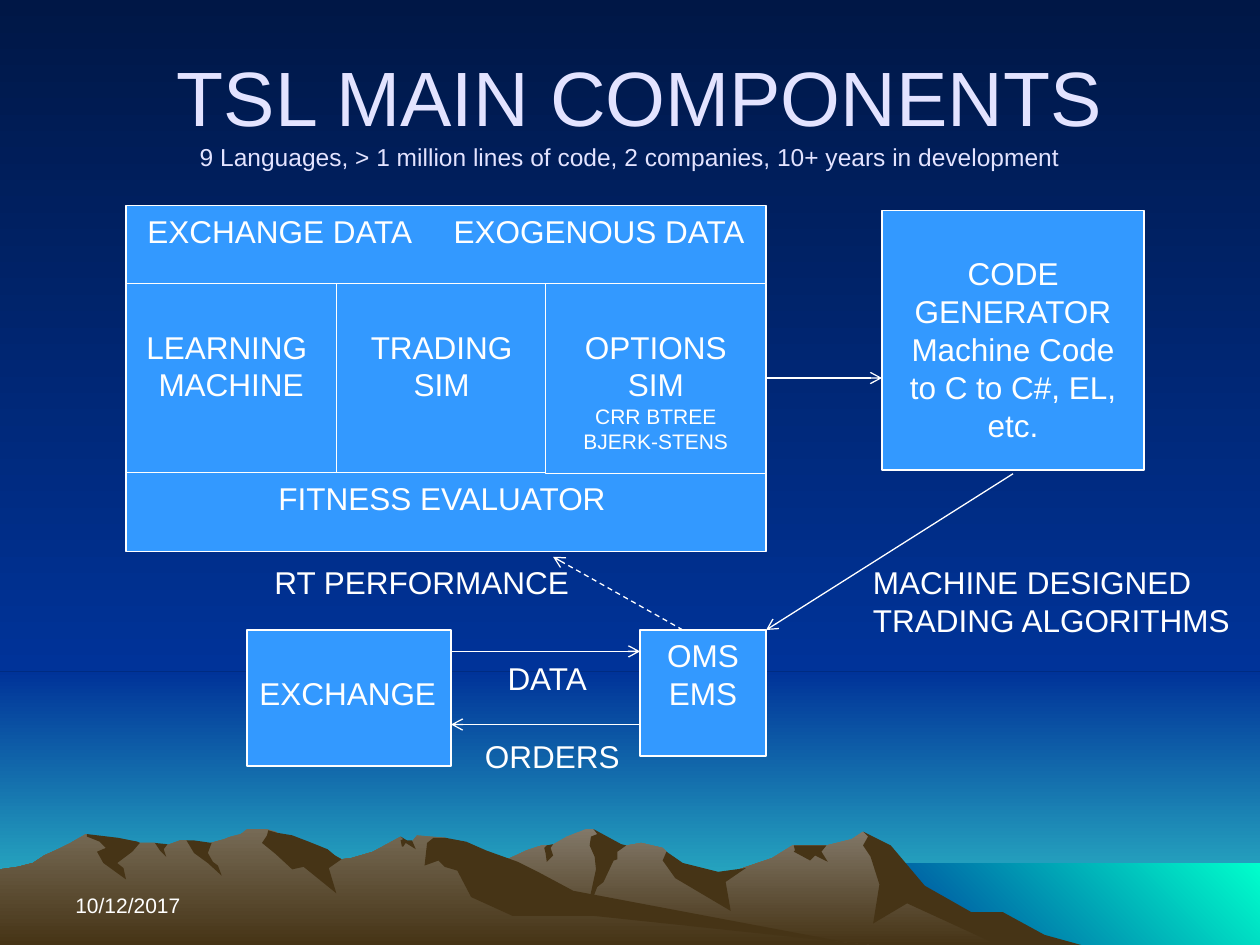
import pptx
import pptx.dml.color
import pptx.enum.dml
import pptx.enum.shapes
import pptx.enum.text
import pptx.oxml
import pptx.oxml.ns
import pptx.util

Inches, Pt = pptx.util.Inches, pptx.util.Pt
RGB = pptx.dml.color.RGBColor
SHAPE = pptx.enum.shapes.MSO_SHAPE
ALIGN = pptx.enum.text.PP_ALIGN
ANCHOR = pptx.enum.text.MSO_ANCHOR

WHITE = RGB(0xFF, 0xFF, 0xFF)
LAVENDER = RGB(0xE3, 0xE3, 0xFF)
BOX_BLUE = RGB(0x33, 0x99, 0xFF)
NIGHT = RGB(0x00, 0x17, 0x46)
ROYAL = RGB(0x00, 0x33, 0x99)
HORIZON = RGB(0x33, 0xCC, 0xCC)
AQUA = RGB(0x00, 0xFF, 0xCC)
EARTH = RGB(0x46, 0x34, 0x16)
FAR_ROCK = RGB(0x82, 0x78, 0x68)
NEAR_ROCK = RGB(0x76, 0x6A, 0x55)
DOWN, UP_RIGHT = 270, 45

# left, top, width, height, first colour, last colour, direction
BACKDROP = [
    (0, 5.33, 10, 2.17, ROYAL, HORIZON, DOWN),
    (0, 0, 10, 5.33, NIGHT, ROYAL, DOWN),
    (6.83, 6.85, 3.17, 0.65, ROYAL, AQUA, UP_RIGHT),
]

FAR_RIDGE = [
    (8.02, 7.4), (7.78, 7.27), (7.64, 7.23), (7.23, 6.98), (7.02, 6.71), (6.85, 6.6),
    (6.76, 6.66), (6.56, 6.71), (6.29, 6.71), (6.13, 6.81), (5.66, 6.97), (5.36, 6.9),
    (5.29, 6.76), (5.26, 6.73), (5.09, 6.69), (4.86, 6.73), (4.74, 6.61), (4.71, 6.58),
    (4.65, 6.58), (4.5, 6.64), (4.38, 6.71), (4.3, 6.71), (4.18, 6.75), (4.05, 6.81),
    (3.94, 6.85), (3.55, 6.98), (3.27, 7.09), (2.77, 7.39), (2.58, 7.5), (8.21, 7.5),
]
NEAR_RIDGE = [
    (6.9, 7.5), (6.67, 7.48), (4.32, 7.12), (3.54, 6.65), (3.31, 6.63), (3.27, 6.68),
    (3.23, 6.68), (3.18, 6.64), (2.96, 6.76), (2.79, 6.81), (2.71, 6.82), (2.6, 6.76),
    (2.36, 6.81), (2.23, 6.63), (2.19, 6.6), (2.12, 6.58), (1.96, 6.58), (1.91, 6.62),
    (1.83, 6.64), (1.78, 6.66), (1.6, 6.71), (1.48, 6.67), (1.43, 6.67), (1.32, 6.71),
    (1.28, 6.71), (1.23, 6.69), (1.11, 6.69), (0.94, 6.71), (0.68, 6.62), (0.56, 6.69),
    (0.46, 6.74), (0.35, 6.79), (0.26, 6.85), (0.14, 6.88), (0, 6.9), (0, 7.5),
]
FAR_SHADOWS = [
    [(7.96, 7.24), (7.71, 7.24), (7.34, 7.03), (7.07, 6.71), (6.85, 6.6), (6.89, 6.64),
     (6.85, 6.71), (6.91, 6.8), (6.98, 7.02), (6.93, 7.33), (7.2, 7.17), (7.92, 7.5),
     (8.58, 7.5), (8.29, 7.42)],
    [(4.71, 6.58), (4.74, 6.62), (4.69, 6.64), (4.68, 6.71), (4.72, 6.8), (4.73, 6.9),
     (4.65, 7.27), (4.74, 7.04), (4.79, 7), (4.87, 6.83), (4.9, 6.82), (4.9, 6.76),
     (4.97, 6.71), (4.93, 6.7)],
    [(5.29, 6.76), (5.26, 6.83), (5.36, 6.97), (5.8, 7.23), (5.76, 7), (5.92, 6.89),
     (5.7, 6.92), (5.42, 6.85)],
    [(6.5, 6.71), (6.3, 6.71), (6.31, 6.75), (6.3, 6.76), (6.43, 6.83), (6.47, 6.79),
     (6.57, 6.84), (6.52, 6.76), (6.56, 6.71)],
    [(4.33, 6.77), (4.32, 6.73), (4.34, 6.71), (4.39, 6.7), (4.37, 6.73), (4.39, 6.79),
     (4.34, 6.84)],
]
NEAR_SHADOWS = [
    [(2.12, 6.63), (2.08, 6.69), (2.19, 6.78), (2.32, 6.9), (2.41, 6.88), (2.67, 7.09),
     (2.61, 6.89), (2.71, 6.82), (2.66, 6.79), (2.6, 6.74), (2.45, 6.68), (2.32, 6.63),
     (2.2, 6.61), (2.13, 6.59)],
    [(3.7, 6.68), (3.54, 6.65), (3.44, 6.65), (3.39, 6.69), (3.37, 6.87), (3.48, 6.83),
     (3.53, 6.88), (3.63, 6.91), (3.74, 7.12), (4.07, 7.27), (4.72, 7.27), (6.9, 7.5),
     (6.83, 7.5), (4.55, 7.07), (4.27, 6.92), (4.11, 6.84), (3.86, 6.75)],
    [(3.18, 6.67), (3.2, 6.66), (3.18, 6.64), (3.23, 6.67), (3.27, 6.67), (3.3, 6.74),
     (3.22, 6.69), (3.2, 6.72), (3.19, 6.72)],
    [(1.54, 6.67), (1.68, 6.69), (1.65, 6.77), (1.69, 6.84), (1.73, 6.87), (1.76, 6.95),
     (1.65, 6.85), (1.54, 6.77), (1.48, 6.67)],
    [(1.33, 6.7), (1.3, 6.74), (1.32, 6.8), (1.27, 6.75), (1.23, 6.69)],
    [(1.09, 6.68), (1.11, 6.69), (1.05, 6.76), (0.93, 6.85), (0.98, 6.89), (1, 6.98),
     (0.82, 6.85), (0.77, 6.76), (0.84, 6.73), (0.79, 6.68), (0.69, 6.64), (0.69, 6.62),
     (0.94, 6.65)],
]

# One entry per paragraph: text, size
TITLE = [("TSL MAIN COMPONENTS", 44),
         ("9 Languages, > 1 million lines of code, 2 companies, 10+ years in development", 14)]
LOWERED = {"margin_top": Inches(0.35)}
# left, top, width, height, paragraphs, alignment, frame formats, shape
BOXES = [
    (1, 2.25, 1.67, 1.5, [("LEARNING ", 18), ("MACHINE", 18)], ALIGN.CENTER, LOWERED, SHAPE.RECTANGLE),
    (2.67, 2.25, 1.67, 1.5, [("TRADING SIM", 18)], ALIGN.CENTER, LOWERED, SHAPE.RECTANGLE),
    (1, 3.75, 5.08, 0.63, [("FITNESS EVALUATOR", 18)], ALIGN.LEFT,
     {"margin_left": Inches(1.21)}, SHAPE.RECTANGLE),
    (7, 1.67, 2.08, 2.06, [("CODE GENERATOR", 18), ("Machine Code to C to C#, EL, etc.", 18)],
     ALIGN.CENTER, LOWERED, SHAPE.RECTANGLE),
    (1.96, 5, 1.62, 1.08, [("EXCHANGE", 18)], ALIGN.LEFT, LOWERED, SHAPE.FLOWCHART_PROCESS),
    (5.08, 5, 1, 1, [("OMS", 18), ("EMS", 18)], ALIGN.CENTER, {}, SHAPE.RECTANGLE),
    (1, 1.63, 5.08, 0.62, [("EXCHANGE DATA\tEXOGENOUS DATA", 18)], ALIGN.LEFT,
     {"margin_left": Inches(0.17)}, SHAPE.RECTANGLE),
    (4.33, 2.25, 1.75, 1.51, [("OPTIONS SIM", 18), ("CRR BTREE", 12), ("BJERK-STENS", 12)],
     ALIGN.CENTER, LOWERED, SHAPE.RECTANGLE),
]
LABELS = [
    (3.93, 5.18, 0.84, 0.4, ["DATA"]),
    (3.75, 5.8, 1.28, 0.4, ["ORDERS"]),
    (6.83, 4.42, 3.06, 0.71, ["MACHINE DESIGNED", "TRADING ALGORITHMS"]),
    (2.08, 4.42, 2.56, 0.4, ["RT PERFORMANCE"]),
]
# start x, start y, end x, end y, dashed
ARROWS = [
    (6.08, 3, 7, 3, False),
    (8.04, 3.76, 6.08, 5, False),
    (3.58, 5.17, 5.08, 5.17, False),
    (5.08, 5.75, 3.58, 5.75, False),
    (5.42, 5, 4.39, 4.42, True),
]


def set_all(target, formats):
    for key, value in formats.items():
        setattr(target, key, value)


def add_xml(parent, tag, **attributes):
    child = pptx.oxml.parse_xml(f"<a:{tag} {pptx.oxml.ns.nsdecls('a')}/>")
    for key, value in attributes.items():
        child.set(key, str(value))
    parent.append(child)
    return child


def shade(fill, first, last, direction):
    fill.gradient()
    fill.gradient_angle = direction
    for stop, colour in zip(fill.gradient_stops, (first, last)):
        stop.color.rgb = colour


def paint(shape, *colours):
    """Fill an unlined shape with one colour, or with two colours and a direction."""
    shape.shadow.inherit = False
    shape.line.fill.background()
    if len(colours) == 1:
        shape.fill.solid()
        shape.fill.fore_color.rgb = colours[0]
    else:
        shade(shape.fill, *colours)


def write(frame, paragraphs, align, colour=WHITE, **formats):
    set_all(frame, {"word_wrap": True, "vertical_anchor": ANCHOR.TOP, **formats})
    for i, (text, size) in enumerate(paragraphs):
        paragraph = frame.add_paragraph() if i else frame.paragraphs[0]
        paragraph.text = text
        paragraph.alignment = align
        if "\t" in text:
            add_xml(add_xml(paragraph._p.get_or_add_pPr(), "tabLst"), "tab",
                    pos=Inches(2.43), algn="l")
        set_all(paragraph.font, {"name": "Arial", "size": Pt(size)})
        paragraph.font.color.rgb = colour


def add_outline(shapes, points, *colours):
    start, *rest = [(Inches(x), Inches(y)) for x, y in points]
    builder = shapes.build_freeform(*start)
    builder.add_line_segments(rest, close=True)
    paint(builder.convert_to_shape(), *colours)


def add_arrow(shapes, x1, y1, x2, y2, dashed):
    arrow = shapes.add_connector(pptx.enum.shapes.MSO_CONNECTOR.STRAIGHT,
                                 *map(Inches, (x1, y1, x2, y2)))
    arrow.line.width = Pt(0.75)
    arrow.line.color.rgb = WHITE
    if dashed:
        arrow.line.dash_style = pptx.enum.dml.MSO_LINE.DASH
    add_xml(arrow.line._get_or_add_ln(), "tailEnd", type="arrow")
    add_xml(arrow._element.spPr, "effectLst")


def main():
    deck = pptx.Presentation()
    set_all(deck, {"slide_width": Inches(10), "slide_height": Inches(7.5)})
    slide = deck.slides.add_slide(deck.slide_layouts[6])
    shapes = slide.shapes
    shade(slide.background.fill, NIGHT, ROYAL, DOWN)
    for *place, first, last, direction in BACKDROP:
        paint(shapes.add_shape(SHAPE.RECTANGLE, *map(Inches, place)), first, last, direction)
    for ridge, rock, shadows in ((FAR_RIDGE, FAR_ROCK, FAR_SHADOWS),
                                 (NEAR_RIDGE, NEAR_ROCK, NEAR_SHADOWS)):
        add_outline(shapes, ridge, rock, EARTH, DOWN)
        for shadow in shadows:
            add_outline(shapes, shadow, EARTH)

    title = shapes.add_textbox(*map(Inches, (0.5, 0.25, 9, 1.25))).text_frame
    write(title, TITLE, ALIGN.CENTER, LAVENDER, vertical_anchor=ANCHOR.MIDDLE)
    title.paragraphs[0]._p.get_or_add_pPr().set("marL", str(Inches(0.16)))
    date = shapes.add_textbox(*map(Inches, (0.5, 6.83, 2.33, 0.5))).text_frame
    write(date, [("10/12/2017", 12)], ALIGN.LEFT, vertical_anchor=ANCHOR.BOTTOM)

    for *place, paragraphs, align, formats, kind in BOXES:
        box = shapes.add_shape(kind, *map(Inches, place))
        paint(box, BOX_BLUE)
        box.line.color.rgb = WHITE
        box.line.width = Pt(0.75)
        write(box.text_frame, paragraphs, align, **formats)
    for *place, lines in LABELS:
        label = shapes.add_textbox(*map(Inches, place)).text_frame
        write(label, [(line, 18) for line in lines], ALIGN.LEFT, word_wrap=False)
    for arrow in ARROWS:
        add_arrow(shapes, *arrow)
    deck.save("out.pptx")


if __name__ == "__main__":
    main()
